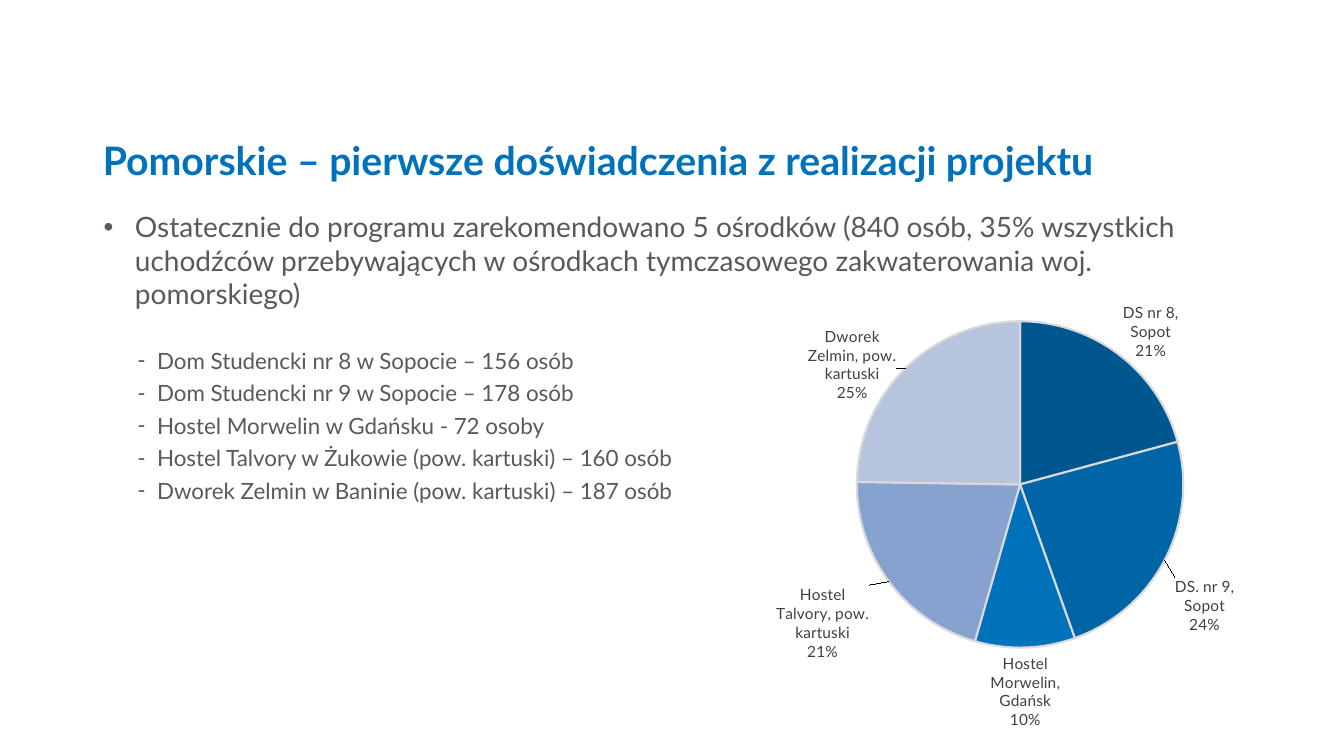
from lxml import etree
from pptx import Presentation
from pptx.chart.data import CategoryChartData
from pptx.dml.color import RGBColor
from pptx.enum.chart import XL_CHART_TYPE, XL_LABEL_POSITION
from pptx.enum.text import MSO_ANCHOR, PP_ALIGN
from pptx.oxml import parse_xml
from pptx.oxml.ns import nsdecls, qn
from pptx.util import Inches, Pt

BLUE = RGBColor(0x00, 0x72, 0xBC)
GREY = RGBColor(0x5C, 0x58, 0x58)
LABEL_GREY = RGBColor(0x40, 0x40, 0x40)
BORDER_GREY = RGBColor(0xD9, 0xD9, 0xD9)

TITLE = "Pomorskie – pierwsze doświadczenia z realizacji projektu"
SUMMARY = (
    "Ostatecznie do programu zarekomendowano 5 ośrodków (840 osób, 35% wszystkich "
    "uchodźców przebywających w ośrodkach tymczasowego zakwaterowania woj. pomorskiego)"
)
CENTRES = [
    "Dom Studencki nr 8 w Sopocie – 156 osób",
    "Dom Studencki nr 9 w Sopocie – 178 osób",
    "Hostel Morwelin w Gdańsku - 72 osoby",
    "Hostel Talvory w Żukowie (pow. kartuski) – 160 osób",
    "Dworek Zelmin w Baninie (pow. kartuski) – 187 osób",
]
# Category, share, slice colour, label shift as a fraction of the chart
SLICES = [
    ("DS nr 8, Sopot", 21, RGBColor(0x00, 0x57, 0x8F), (0, 0.02)),
    ("DS. nr 9, Sopot", 24, RGBColor(0x00, 0x65, 0xA7), (0.01, 0.03)),
    ("Hostel Morwelin, Gdańsk", 10, BLUE, (0, 0)),
    ("Hostel Talvory, pow. kartuski", 21, RGBColor(0x87, 0xA2, 0xCE), (-0.03, 0)),
    ("Dworek Zelmin, pow. kartuski", 25, RGBColor(0xB6, 0xC4, 0xDE), (-0.01, 0.08)),
]
PLOT_AREA = {"x": 0.189, "y": 0.099, "w": 0.69, "h": 0.686}

TITLE_FONT = {"name": "Lato", "size": Pt(28), "bold": True}
SUMMARY_FONT = {"name": "Lato", "size": Pt(20)}
CENTRE_FONT = {"name": "Lato", "size": Pt(16)}
LABEL_FONT = {"name": "Lato", "size": Pt(11), "bold": False}


def format_font(font, values, color):
    for name, value in values.items():
        setattr(font, name, value)
    font.color.rgb = color


def add_bullet(paragraph, character, margin, indent):
    properties = paragraph._p.get_or_add_pPr()
    properties.set("marL", str(Inches(margin)))
    properties.set("indent", str(Inches(indent)))
    font = etree.SubElement(properties, qn("a:buFont"))
    font.set("typeface", "Arial")
    bullet = etree.SubElement(properties, qn("a:buChar"))
    bullet.set("char", character)


def manual_layout(values, inner=False):
    target = '<c:layoutTarget val="inner"/>' if inner else ""
    modes = '<c:xMode val="edge"/><c:yMode val="edge"/>' if inner else ""
    numbers = "".join(f'<c:{key} val="{value}"/>' for key, value in values.items())
    return parse_xml(
        f"<c:layout {nsdecls('c')}><c:manualLayout>{target}{modes}{numbers}"
        "</c:manualLayout></c:layout>"
    )


def show_category_and_percent(labels):
    """Set the shown parts of a label element, one part per line."""
    for name, shown in (("showVal", 0), ("showCatName", 1), ("showPercent", 1)):
        labels.find(qn(f"c:{name}")).set("val", str(shown))
    separator = parse_xml(f"<c:separator {nsdecls('c')}>\n</c:separator>")
    last = labels.find(qn("c:showBubbleSize"))
    if last is None:
        last = labels.find(qn("c:showPercent"))
    last.addnext(separator)


def add_title(slide):
    title = slide.shapes.title
    title.left, title.top = Inches(0.92), Inches(1.24)
    title.width, title.height = Inches(11.5), Inches(0.69)
    frame = title.text_frame
    frame.text = TITLE
    frame.vertical_anchor = MSO_ANCHOR.MIDDLE
    paragraph = frame.paragraphs[0]
    paragraph.alignment = PP_ALIGN.LEFT
    format_font(paragraph.runs[0].font, TITLE_FONT, BLUE)


def add_body(slide):
    box = slide.shapes.add_textbox(Inches(0.92), Inches(2.03), Inches(11.5), Inches(5.31))
    frame = box.text_frame
    frame.word_wrap = True
    summary = frame.paragraphs[0]
    summary.text = SUMMARY
    add_bullet(summary, "•", 0.32, -0.31)
    format_font(summary.runs[0].font, SUMMARY_FONT, GREY)
    for index, text in enumerate(CENTRES):
        paragraph = frame.add_paragraph()
        paragraph.text = text
        paragraph.level = 1
        paragraph.space_before = Pt(4 if index else 26)
        add_bullet(paragraph, "-", 0.54, -0.19)
        format_font(paragraph.runs[0].font, CENTRE_FONT, GREY)


def add_pie(slide):
    data = CategoryChartData()
    data.categories = [category for category, *_ in SLICES]
    data.add_series("Series 1", [share for _, share, *_ in SLICES])
    chart = slide.shapes.add_chart(
        XL_CHART_TYPE.PIE, Inches(7.48), Inches(2.72), Inches(4.94), Inches(4.72), data
    ).chart
    chart.has_legend = False
    chart.has_title = False
    format_font(chart.font, LABEL_FONT, LABEL_GREY)
    plot = chart.plots[0]
    plot.vary_by_categories = True

    plot_area = chart._chartSpace.chart.plotArea
    for layout in plot_area.findall(qn("c:layout")):
        plot_area.remove(layout)
    plot_area.insert(0, manual_layout(PLOT_AREA, inner=True))

    series = plot.series[0]
    for index, (_, _, color, (shift_x, shift_y)) in enumerate(SLICES):
        point = series.points[index]
        point.format.fill.solid()
        point.format.fill.fore_color.rgb = color
        point.format.line.color.rgb = BORDER_GREY
        point.format.line.width = Pt(1.5)
        label = point.data_label
        format_font(label.font, LABEL_FONT, LABEL_GREY)
        label.position = XL_LABEL_POSITION.OUTSIDE_END
        element = label._dLbl
        show_category_and_percent(element)
        if shift_x or shift_y:
            element.find(qn("c:idx")).addnext(manual_layout({"x": shift_x, "y": shift_y}))


def main():
    presentation = Presentation()
    presentation.slide_width = Inches(13.33)
    presentation.slide_height = Inches(7.5)
    slide = presentation.slides.add_slide(presentation.slide_layouts[5])
    add_title(slide)
    add_body(slide)
    add_pie(slide)
    presentation.save("out.pptx")


if __name__ == "__main__":
    main()
